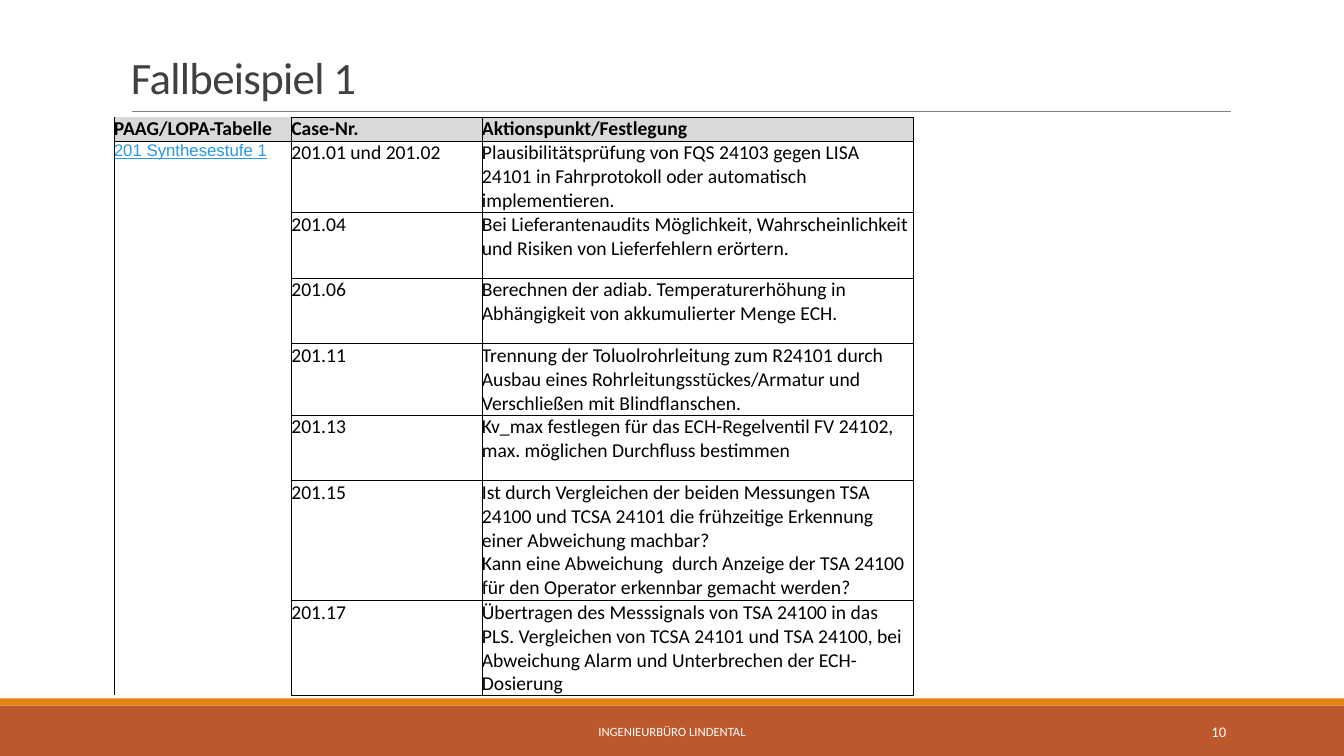
import dataclasses
import pptx
import pptx.dml.color
import pptx.enum.shapes
import pptx.enum.text
import pptx.oxml
import pptx.oxml.ns
import pptx.util

ALIGN = pptx.enum.text.PP_ALIGN
ANCHOR = pptx.enum.text.MSO_ANCHOR
RECT = pptx.enum.shapes.MSO_SHAPE.RECTANGLE
LINE = pptx.enum.shapes.MSO_CONNECTOR.STRAIGHT
INCH = pptx.util.Inches


@dataclasses.dataclass(frozen=True)
class Theme:
    font: str = "Calibri"
    alt: str = "Arial"
    ink: str = "000000"
    head: str = "404040"
    rule: str = "808080"
    band: str = "BD582C"
    strip: str = "E48312"
    light: str = "FFFFFF"
    shade: str = "D9D9D9"
    link: str = "2998E3"
    title: float = 32
    body: float = 14
    small: float = 12
    page: float = 10.5
    foot: float = 9


THEME = Theme()
WIDE, HIGH = 13.33, 7.5
COLS = (1.76, 1.89, 4.28)
ROWS = (0.24, 0.71, 0.65, 0.65, 0.71, 0.65, 1.19, 0.94)
HEADS = ("PAAG/LOPA-Tabelle", "Case-Nr.", "Aktionspunkt/Festlegung")
GROUP = "201 Synthesestufe 1"
CASES = (
    ("201.01 und 201.02", "Plausibilitätsprüfung von FQS 24103 gegen LISA 24101 "
     "in Fahrprotokoll oder automatisch implementieren."),
    ("201.04", "Bei Lieferantenaudits Möglichkeit, Wahrscheinlichkeit "
     "und Risiken von Lieferfehlern erörtern."),
    ("201.06", "Berechnen der adiab. Temperaturerhöhung in Abhängigkeit "
     "von akkumulierter Menge ECH."),
    ("201.11", "Trennung der Toluolrohrleitung zum R24101 durch Ausbau eines "
     "Rohrleitungsstückes/Armatur und Verschließen mit Blindflanschen."),
    ("201.13", "Kv_max festlegen für das ECH-Regelventil FV 24102, "
     "max. möglichen Durchfluss bestimmen"),
    ("201.15", "Ist durch Vergleichen der beiden Messungen TSA 24100 und "
     "TCSA 24101 die frühzeitige Erkennung einer Abweichung machbar?\v"
     "Kann eine Abweichung  durch Anzeige der TSA 24100 "
     "für den Operator erkennbar gemacht werden?"),
    ("201.17", "Übertragen des Messsignals von TSA 24100 in das PLS. "
     "Vergleichen von TCSA 24101 und TSA 24100, bei Abweichung Alarm "
     "und Unterbrechen der ECH-Dosierung"),
)


def tint(code):
    return pptx.dml.color.RGBColor.from_string(code)


def style(font, size, color, name=THEME.font):
    font.size = pptx.util.Pt(size)
    font.color.rgb = tint(color)
    font.name = name


def label(slide, box, text, size, color, align=ALIGN.LEFT, anchor=ANCHOR.MIDDLE):
    frame = slide.shapes.add_textbox(*map(INCH, box)).text_frame
    frame.word_wrap = True
    frame.vertical_anchor = anchor
    para = frame.paragraphs[0]
    para.text = text
    para.alignment = align
    style(para.font, size, color)
    return para


def bar(slide, box, color):
    shape = slide.shapes.add_shape(RECT, *map(INCH, box))
    shape.shadow.inherit = False
    shape.fill.solid()
    shape.fill.fore_color.rgb = tint(color)
    shape.line.fill.background()


def header(slide, box):
    """Title with a thin rule below it."""
    left, top, wide, high = box
    para = label(slide, box, "Fallbeispiel 1", THEME.title, THEME.head,
                 anchor=ANCHOR.BOTTOM)
    para.line_spacing = 0.85
    para.runs[0].font._element.set("spc", "-50")
    level = top + high + 0.02
    rule = slide.shapes.add_connector(
        LINE, *map(INCH, (left + 0.11, level, left + wide + 0.01, level)))
    rule.line.color.rgb = tint(THEME.rule)
    rule.line.width = pptx.util.Pt(0.5)
    rule._element.spPr.append(pptx.oxml.parse_xml(
        f'<a:effectLst {pptx.oxml.ns.nsdecls("a")}/>'))


def footer(slide, box):
    left, top, wide, high = box
    bar(slide, box, THEME.band)
    bar(slide, (left, top - 0.07, wide, 0.07), THEME.strip)
    row = top + 0.06
    label(slide, (left + 4.03, row, 5.27, 0.4), "INGENIEURBÜRO LINDENTAL",
          THEME.foot, THEME.light, ALIGN.CENTER)
    label(slide, (left + 10.83, row, 1.43, 0.4), "10",
          THEME.page, THEME.light, ALIGN.RIGHT)


def edge(cell, sides):
    """Draw the named sides of a cell and clear the others."""
    props = cell._tc.get_or_add_tcPr()
    for side in "LRTB":
        paint = (f'<a:solidFill><a:srgbClr val="{THEME.ink}"/></a:solidFill>'
                 if side in sides else "<a:noFill/>")
        props.append(pptx.oxml.parse_xml(
            f'<a:ln{side} {pptx.oxml.ns.nsdecls("a")} w="6350">{paint}</a:ln{side}>'))


def sides(row, col):
    if col:
        return "LRTB"
    return {0: "LRB", 1: "LRT"}.get(row, "LR")


def write(cell, text, row, col):
    cell.margin_left = cell.margin_right = 0
    cell.margin_top = cell.margin_bottom = 0
    edge(cell, sides(row, col))
    if row:
        cell.fill.background()
    else:
        cell.fill.solid()
        cell.fill.fore_color.rgb = tint(THEME.shade)
        cell.vertical_anchor = ANCHOR.BOTTOM
    frame = cell.text_frame
    frame.text = text
    for para in frame.paragraphs:
        if row and not col:
            style(para.font, THEME.small, THEME.link, THEME.alt)
            para.font.underline = True
        else:
            style(para.font, THEME.body, THEME.ink)
            para.font.bold = row == 0


def cases(slide, box):
    """Table of cases and the actions agreed on."""
    data = [HEADS] + [("" if num else GROUP, *case)
                      for num, case in enumerate(CASES)]
    table = slide.shapes.add_table(len(ROWS), len(COLS), *map(INCH, box)).table
    table.first_row = table.horz_banding = False
    for col, wide in zip(table.columns, COLS):
        col.width = INCH(wide)
    for row, high in zip(table.rows, ROWS):
        row.height = INCH(high)
    for row, line in enumerate(data):
        for col, text in enumerate(line):
            write(table.cell(row, col), text, row, col)


def main():
    deck = pptx.Presentation()
    deck.slide_width, deck.slide_height = INCH(WIDE), INCH(HIGH)
    slide = deck.slides.add_slide(deck.slide_layouts[6])
    footer(slide, (0, HIGH - 0.5, WIDE, 0.5))
    header(slide, (1.2, 0.31, 11, 0.77))
    cases(slide, (1.13, 1.16, sum(COLS), sum(ROWS)))
    deck.save("out.pptx")


if __name__ == "__main__":
    main()
